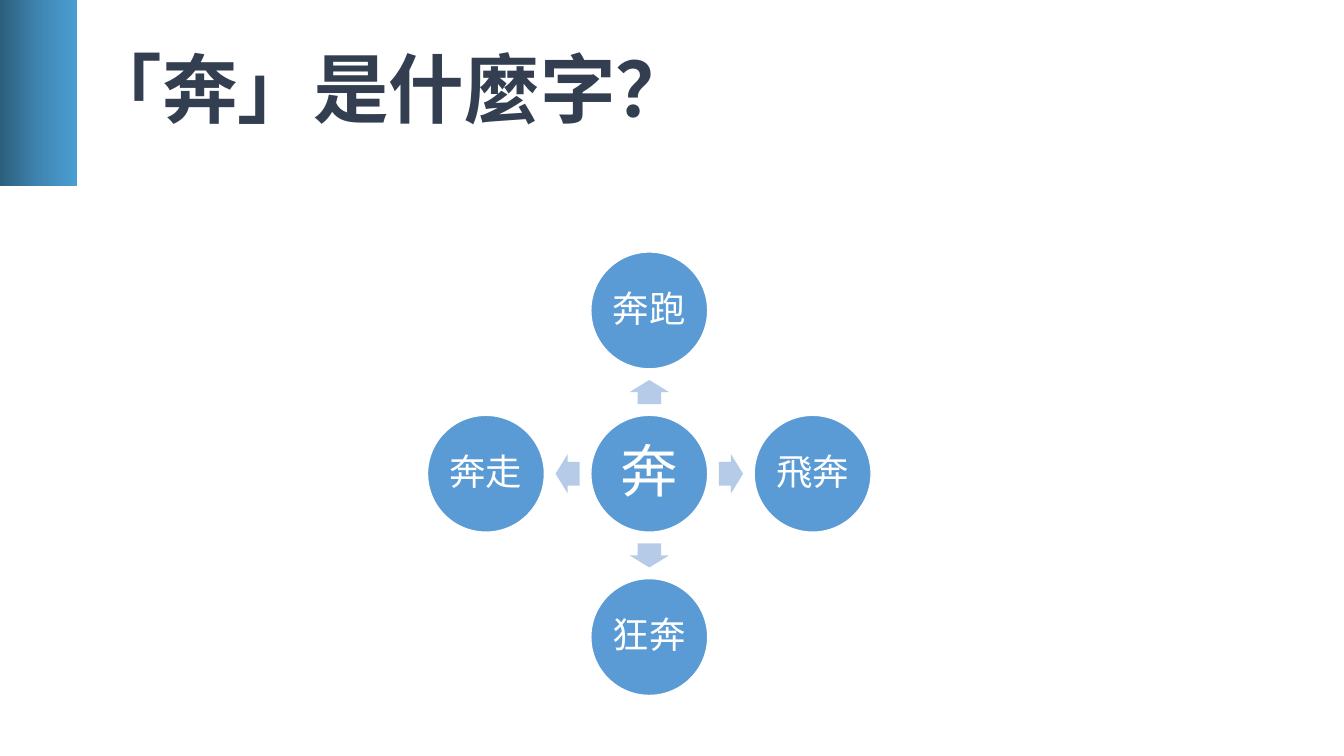
from copy import deepcopy
from dataclasses import dataclass
from math import cos, radians, sin

from lxml.etree import SubElement
from pptx import Presentation
from pptx.dml.color import RGBColor as Rgb
from pptx.enum.shapes import MSO_SHAPE as Preset
from pptx.enum.text import MSO_ANCHOR as Anchor, PP_ALIGN as Align
from pptx.oxml.ns import qn
from pptx.util import Inches, Pt


@dataclass(frozen=True)
class Theme:
    title: str = "333F50"
    circle: str = "5B9BD5"
    arrow: str = "B5CBE7"
    white: str = "FFFFFF"
    band: tuple = ("2C5E7C", "3F85B1", "4A9ED2")
    latin: str = "Calibri"
    chinese: str = "Noto Sans CJK SC"
    title_size: int = 54
    hub_size: int = 41
    word_size: int = 26


@dataclass(frozen=True)
class Spoke:
    word: str
    angle: int  # clockwise from the right


THEME = Theme()
SPOKES = [Spoke("奔跑", 270), Spoke("飛奔", 0), Spoke("狂奔", 90), Spoke("奔走", 180)]
CENTER_X, CENTER_Y = 6.44, 4.7
DIAMETER = 1.16
WORD_RADIUS, ARROW_RADIUS = 1.62, 0.81
ARROW_LENGTH, ARROW_WIDTH = 0.24, 0.39


def add_preset(page, preset, x: float, y: float, width: float, height: float):
    """Add a shape without shadow or outline, centred on x, y."""
    shape = page.shapes.add_shape(preset, Inches(x - width / 2), Inches(y - height / 2),
                                  Inches(width), Inches(height))
    shape.shadow.inherit = False
    shape.line.fill.background()
    return shape


def set_text(frame, text: str, size: int, color: str, latin: str, bold: bool = False):
    """Write one paragraph, centred vertically, and return it."""
    frame.text = text
    frame.word_wrap = True
    frame.vertical_anchor = Anchor.MIDDLE
    para = frame.paragraphs[0]
    para.line_spacing = 0.9
    span = para.runs[0]
    span.font.name, span.font.size, span.font.bold = latin, Pt(size), bold
    span.font.color.rgb = Rgb.from_string(color)
    east_asian = SubElement(span.font._element, qn("a:ea"))
    east_asian.set("typeface", THEME.chinese)
    return para


def add_band(page) -> None:
    band = add_preset(page, Preset.RECTANGLE, 0.38, 0.925, 0.76, 1.85)
    band.fill.gradient()
    band.fill.gradient_angle = 0
    stop_list = band._element.find(".//" + qn("a:gsLst"))
    stop_list.append(deepcopy(stop_list[-1]))
    for index, (stop, color) in enumerate(zip(band.fill.gradient_stops, THEME.band)):
        stop.position = index / 2
        stop.color.rgb = Rgb.from_string(color)


def add_title(page) -> None:
    box = page.shapes.add_textbox(Inches(0.76), 0, Inches(11.5), Inches(1.85))
    set_text(box.text_frame, "「奔」是什麼字？", THEME.title_size, THEME.title,
             THEME.chinese, bold=True)


def add_circle(page, word: str, x: float, y: float, size: int, inset: float) -> None:
    circle = add_preset(page, Preset.OVAL, x, y, DIAMETER, DIAMETER)
    circle.fill.solid()
    circle.fill.fore_color.rgb = Rgb.from_string(THEME.circle)
    circle.line.color.rgb = Rgb.from_string(THEME.white)
    circle.line.width = Pt(1)
    frame = circle.text_frame
    frame.margin_left = frame.margin_right = Inches(inset)
    frame.margin_top = frame.margin_bottom = Inches(inset)
    para = set_text(frame, word, size, THEME.white, THEME.latin)
    para.alignment = Align.CENTER
    para.space_after = Pt(round(size * 0.35))


def add_spoke(page, spoke: Spoke) -> None:
    across, down = cos(radians(spoke.angle)), sin(radians(spoke.angle))
    arrow = add_preset(page, Preset.RIGHT_ARROW, CENTER_X + ARROW_RADIUS * across,
                       CENTER_Y + ARROW_RADIUS * down, ARROW_LENGTH, ARROW_WIDTH)
    arrow.rotation = spoke.angle
    arrow.adjustments[0], arrow.adjustments[1] = 0.6, 0.5
    arrow.fill.solid()
    arrow.fill.fore_color.rgb = Rgb.from_string(THEME.arrow)
    add_circle(page, spoke.word, CENTER_X + WORD_RADIUS * across,
               CENTER_Y + WORD_RADIUS * down, THEME.word_size, 0.04)


def main() -> None:
    deck = Presentation()
    deck.slide_width, deck.slide_height = Inches(13.33), Inches(7.5)
    page = deck.slides.add_slide(deck.slide_layouts[6])

    # Heading
    add_band(page)
    add_title(page)

    # Character in the middle, words around it
    add_circle(page, "奔", CENTER_X, CENTER_Y, THEME.hub_size, 0.06)
    for spoke in SPOKES:
        add_spoke(page, spoke)

    deck.save("out.pptx")


if __name__ == "__main__":
    main()
